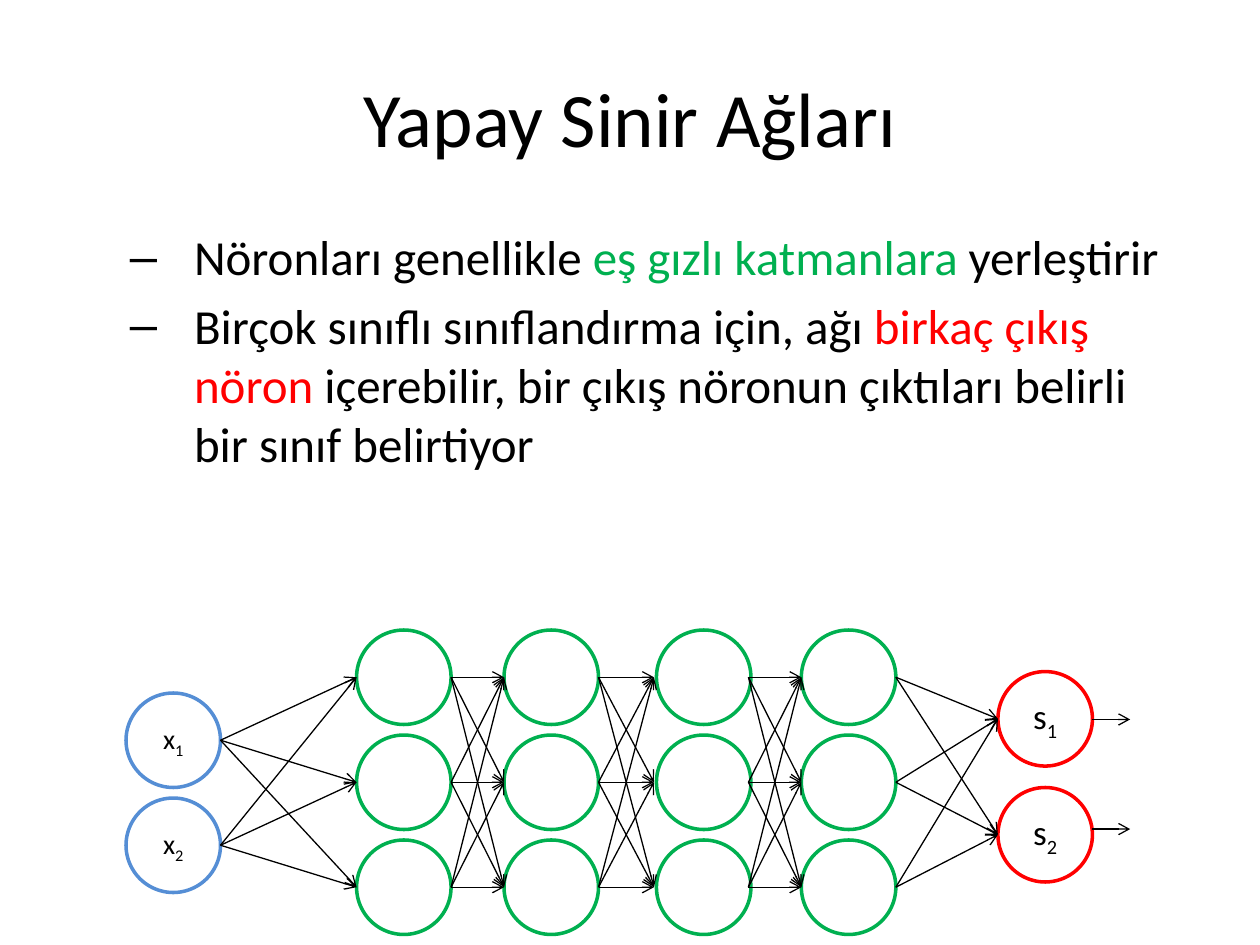
from itertools import product

from lxml.etree import SubElement
from pptx import Presentation
from pptx.dml.color import RGBColor
from pptx.enum.shapes import MSO_CONNECTOR, MSO_SHAPE
from pptx.enum.text import MSO_ANCHOR, PP_ALIGN
from pptx.oxml.ns import qn
from pptx.util import Inches, Pt

BLACK = RGBColor(0x00, 0x00, 0x00)
WHITE = RGBColor(0xFF, 0xFF, 0xFF)
BLUE = RGBColor(0x55, 0x8E, 0xD5)
GREEN = RGBColor(0x00, 0xB0, 0x50)
RED = RGBColor(0xFF, 0x00, 0x00)

TITLE = "Yapay Sinir Ağları"
BULLETS = [
    [("Nöronları genellikle ", BLACK), ("eş gızlı katmanlara", GREEN), (" yerleştirir", BLACK)],
    [("Birçok sınıflı sınıflandırma için, ağı ", BLACK), ("birkaç çıkış nöron ", RED),
     ("içerebilir, bir çıkış nöronun çıktıları belirli bir sınıf belirtiyor", BLACK)],
]

DIAMETER = 0.75
PITCH = 5 / 6
HIDDEN = {"top": 5, "pitch": PITCH, "color": GREEN, "count": 3}
# "shift" moves the ends of the arrows sideways from the edge of the circles
LAYERS = [
    {"left": 1, "top": 5.5, "pitch": PITCH, "color": BLUE, "count": 2, "label": "x", "size": 16},
    {"left": 2.83, **HIDDEN},
    {"left": 4, **HIDDEN},
    {"left": 5.21, "shift": -0.02, **HIDDEN},
    {"left": 6.36, **HIDDEN},
    {"left": 7.92, "top": 5.33, "pitch": 0.92, "color": RED, "count": 2, "label": "s", "size": 20},
]
OUTPUT_HEIGHTS = [5.71, 6.58]
OUTPUT_LENGTH = 0.3


def add_text(para, text, size, color=BLACK, subscript=False):
    span = para.add_run()
    span.text = text
    span.font.name = "Calibri"
    span.font.size = Pt(size)
    span.font.color.rgb = color
    if subscript:
        span.font._element.set("baseline", "-25000")


def place(box, left, top, width, height):
    box.left, box.top = Inches(left), Inches(top)
    box.width, box.height = Inches(width), Inches(height)


def add_neuron(page, layer, index):
    neuron = page.shapes.add_shape(
        MSO_SHAPE.OVAL, Inches(layer["left"]), Inches(layer["top"] + index * layer["pitch"]),
        Inches(DIAMETER), Inches(DIAMETER))
    neuron.shadow.inherit = False
    neuron.fill.solid()
    neuron.fill.fore_color.rgb = WHITE
    neuron.line.color.rgb = layer["color"]
    neuron.line.width = Pt(2)
    if "label" in layer:
        neuron.text_frame.vertical_anchor = MSO_ANCHOR.MIDDLE
        para = neuron.text_frame.paragraphs[0]
        para.alignment = PP_ALIGN.CENTER
        add_text(para, layer["label"], layer["size"])
        add_text(para, str(index + 1), layer["size"], subscript=True)


def add_arrow(page, start, end):
    arrow = page.shapes.add_connector(
        MSO_CONNECTOR.STRAIGHT, *(Inches(value) for value in (*start, *end)))
    arrow.line.color.rgb = BLACK
    arrow.line.width = Pt(0.75)
    SubElement(arrow.line._get_or_add_ln(), qn("a:tailEnd"), type="arrow")
    SubElement(arrow._element.spPr, qn("a:effectLst"))


def ports(layer, offset):
    """Points where arrows meet the circles of a layer, offset from their left edge."""
    x = layer["left"] + layer.get("shift", 0) + offset
    return [(x, layer["top"] + index * layer["pitch"] + DIAMETER / 2)
            for index in range(layer["count"])]


def main():
    deck = Presentation()
    deck.slide_width, deck.slide_height = Inches(10), Inches(7.5)
    page = deck.slides.add_slide(deck.slide_layouts[1])

    title, body = page.placeholders
    place(title, 0.5, 0.3, 9, 1.25)
    title.text_frame.vertical_anchor = MSO_ANCHOR.MIDDLE
    heading = title.text_frame.paragraphs[0]
    heading.alignment = PP_ALIGN.CENTER
    add_text(heading, TITLE, 44)

    place(body, 0.5, 1.75, 9, 3.25)
    for number, bullet in enumerate(BULLETS):
        para = body.text_frame.add_paragraph() if number else body.text_frame.paragraphs[0]
        para.level = 1
        properties = para._p.get_or_add_pPr()
        properties.set("marL", str(Inches(0.94)))
        properties.set("indent", str(Inches(-0.51)))
        SubElement(properties, qn("a:buChar"), char="–")
        for text, color in bullet:
            add_text(para, text, 28, color=color)

    for layer in LAYERS:
        for index in range(layer["count"]):
            add_neuron(page, layer, index)
    for layer, following in zip(LAYERS, LAYERS[1:]):
        for start, end in product(ports(layer, DIAMETER), ports(following, 0)):
            add_arrow(page, start, end)
    output_x = LAYERS[-1]["left"] + DIAMETER
    for y in OUTPUT_HEIGHTS:
        add_arrow(page, (output_x, y), (output_x + OUTPUT_LENGTH, y))

    deck.save("out.pptx")


if __name__ == "__main__":
    main()
